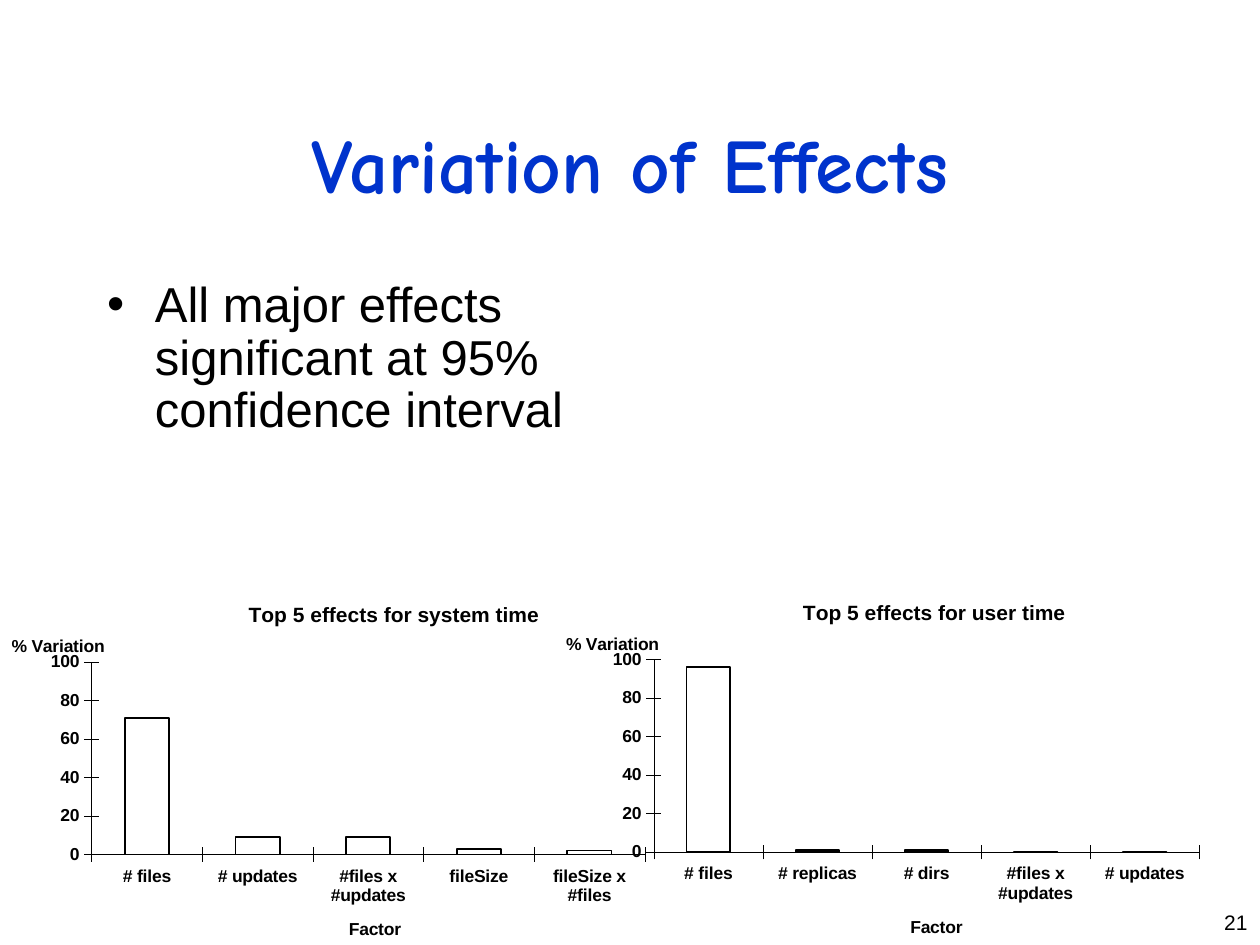
from dataclasses import dataclass

from lxml import etree
from pptx import Presentation
from pptx.chart.data import CategoryChartData
from pptx.dml.color import RGBColor
from pptx.enum.chart import XL_CHART_TYPE, XL_TICK_MARK
from pptx.enum.text import MSO_ANCHOR, MSO_AUTO_SIZE, PP_ALIGN
from pptx.oxml.ns import qn
from pptx.util import Inches, Pt

CENTER, LEFT, RIGHT = PP_ALIGN.CENTER, PP_ALIGN.LEFT, PP_ALIGN.RIGHT
TOP, MIDDLE = MSO_ANCHOR.TOP, MSO_ANCHOR.MIDDLE
COLUMNS = XL_CHART_TYPE.COLUMN_CLUSTERED
CROSS, NO_TICK = XL_TICK_MARK.CROSS, XL_TICK_MARK.NONE


@dataclass(frozen=True)
class Theme:
    title_color: RGBColor = RGBColor(0x00, 0x33, 0xCC)
    ink: RGBColor = RGBColor(0x00, 0x00, 0x00)
    paper: RGBColor = RGBColor(0xFF, 0xFF, 0xFF)
    title_font: str = "Comic Neue"
    font: str = "Arial"
    title_size: int = 44
    body_size: int = 28
    number_size: int = 12
    chart_title_size: int = 12
    chart_size: int = 10
    axis_width: float = 0.25
    bar_width: float = 1


THEME = Theme()


@dataclass(frozen=True)
class EffectChart:
    title: str
    left: float
    top: float
    plot_left: float
    plot_width: float
    factor_left: float
    variation: dict[str, int]


EFFECT_CHARTS = (
    EffectChart("Top 5 effects for system time", 0, 4.65, 0.13, 0.784, 0.49,
                {"# files": 71, "# updates": 9, "#files x #updates": 9,
                 "fileSize": 3, "fileSize x #files": 2}),
    EffectChart("Top 5 effects for user time", 4.4, 4.63, 0.141, 0.773, 0.5,
                {"# files": 96, "# replicas": 1, "# dirs": 1,
                 "#files x #updates": 0, "# updates": 0}),
)


def place(shape, left: float, top: float, width: float, height: float) -> None:
    shape.left, shape.top = Inches(left), Inches(top)
    shape.width, shape.height = Inches(width), Inches(height)


def style_font(font, *, size: int, color: RGBColor = THEME.ink,
               name: str = THEME.font, bold: bool = False) -> None:
    font.size, font.name, font.bold = Pt(size), name, bold
    font.color.rgb = color


def write_text(shape, text: str, *, align=LEFT, anchor=TOP, bullet: str = "",
               indent: float = 0, line_spacing: float = 1, **font_format) -> None:
    frame = shape.text_frame
    frame.word_wrap = True
    frame.auto_size = MSO_AUTO_SIZE.NONE
    frame.vertical_anchor = anchor
    paragraph = frame.paragraphs[0]
    paragraph.text = text
    paragraph.alignment = align
    paragraph.line_spacing = line_spacing
    paragraph.space_before = Pt(0)
    if bullet:
        properties = paragraph._p.get_or_add_pPr()
        properties.set("marL", str(Inches(indent)))
        properties.set("indent", str(-Inches(indent)))
        etree.SubElement(properties, qn("a:buChar")).set("char", bullet)
    style_font(paragraph.runs[0].font, **font_format)


def set_layout(parent, index: int, **values) -> None:
    """Give a chart part a manual layout, as fractions of the chart."""
    for old_layout in parent.findall(qn("c:layout")):
        parent.remove(old_layout)
    layout = etree.Element(qn("c:layout"))
    manual = etree.SubElement(layout, qn("c:manualLayout"))
    for name, value in values.items():
        etree.SubElement(manual, qn(f"c:{name}")).set("val", str(value))
    parent.insert(index, layout)


def write_chart_title(title, text: str, left: float, top: float, size: int) -> None:
    title.text_frame.text = text
    style_font(title.text_frame.paragraphs[0].runs[0].font, size=size, bold=True)
    body = title._element.find(".//" + qn("a:bodyPr"))
    body.set("rot", "0")
    body.set("vert", "horz")
    set_layout(title._element, 1, xMode="edge", yMode="edge", x=left, y=top)


def style_axis(axis, title: str, left: float, top: float) -> None:
    axis.has_major_gridlines = False
    axis.major_tick_mark, axis.minor_tick_mark = CROSS, NO_TICK
    axis.format.line.color.rgb = THEME.ink
    axis.format.line.width = Pt(THEME.axis_width)
    write_chart_title(axis.axis_title, title, left, top, THEME.chart_size)


def add_effect_chart(slide, effect: EffectChart) -> None:
    data = CategoryChartData()
    data.categories = list(effect.variation)
    data.add_series("Series 1", list(effect.variation.values()))
    chart = slide.shapes.add_chart(
        COLUMNS, Inches(effect.left), Inches(effect.top), Inches(5.6), Inches(2.85), data
    ).chart
    chart.has_legend = False
    style_font(chart.font, size=THEME.chart_size, bold=True)
    write_chart_title(chart.chart_title, effect.title, 0.347, 0.035, THEME.chart_title_size)

    # Axes
    style_axis(chart.category_axis, "Factor", effect.factor_left, 0.93)
    value_axis = chart.value_axis
    style_axis(value_axis, "% Variation", 0.012, 0.13)
    value_axis.minimum_scale, value_axis.maximum_scale = 0, 100
    value_axis.major_unit = 20

    # Outlined columns
    plot = chart.plots[0]
    plot.gap_width = 150
    plot.vary_by_categories = False
    columns = plot.series[0].format
    columns.fill.background()
    columns.line.color.rgb = THEME.ink
    columns.line.width = Pt(THEME.bar_width)

    # Plot area
    plot_area = chart._chartSpace.chart.plotArea
    set_layout(plot_area, 0, layoutTarget="inner", xMode="edge", yMode="edge",
               x=effect.plot_left, y=0.215, w=effect.plot_width, h=0.544)
    properties = etree.SubElement(plot_area, qn("c:spPr"))
    fill = etree.SubElement(properties, qn("a:solidFill"))
    etree.SubElement(fill, qn("a:srgbClr")).set("val", str(THEME.paper))


def main() -> None:
    presentation = Presentation()
    presentation.slide_width, presentation.slide_height = Inches(10), Inches(7.5)
    slide = presentation.slides.add_slide(presentation.slide_layouts[1])

    # Title and list
    title, body = slide.placeholders
    place(title, 0.75, 0.67, 8.5, 1.25)
    write_text(title, "Variation of Effects", align=CENTER, anchor=MIDDLE,
               size=THEME.title_size, color=THEME.title_color,
               name=THEME.title_font, bold=True)
    place(body, 0.75, 2.17, 4.17, 4.5)
    write_text(body, "All major effects significant at 95% confidence interval",
               bullet="•", indent=0.38, line_spacing=0.9, size=THEME.body_size)

    # Slide number
    number = slide.shapes.add_textbox(Inches(9.25), Inches(7.17), Inches(0.75), Inches(0.33))
    write_text(number, "21", align=RIGHT, size=THEME.number_size)

    # Charts
    for effect in EFFECT_CHARTS:
        add_effect_chart(slide, effect)

    presentation.save("out.pptx")


if __name__ == "__main__":
    main()
